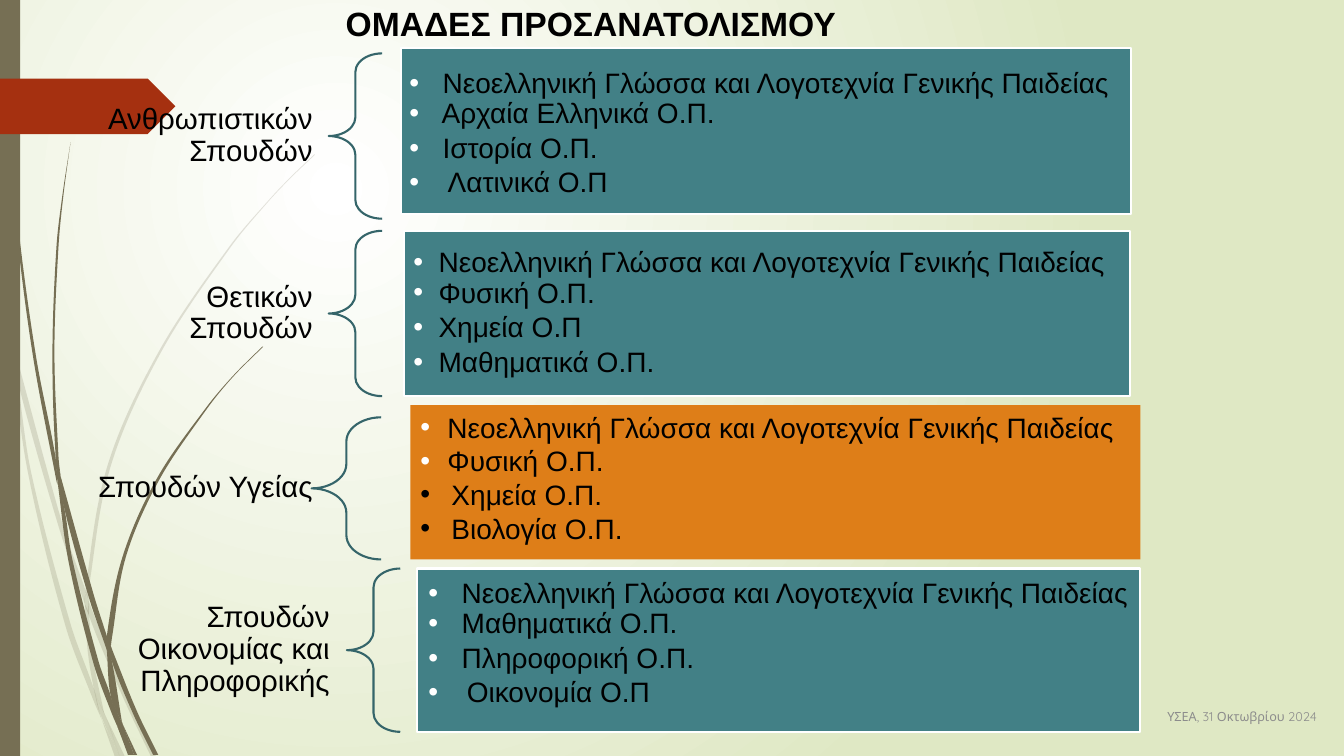
"""Build the slide that lists the subjects of each study orientation group."""
import pptx
import pptx.dml.color
import pptx.enum.shapes
import pptx.enum.text
import pptx.oxml
import pptx.oxml.ns
import pptx.util

SHAPE = pptx.enum.shapes.MSO_SHAPE
ANCHOR = pptx.enum.text.MSO_ANCHOR
ALIGN = pptx.enum.text.PP_ALIGN
COLUMNS, ROWS = 1333, 750

THEME = {
    "font": "Arial", "footer_font": "Quicksand",
    "title": 24, "label": 21, "subject": 20, "footer": 9, "outline": 1.5,
    "ink": "000000", "light": "FFFFFF", "muted": "8C8C8C", "backdrop": "DFE8C4",
    "teal": "428086", "orange": "DE7E18", "brace": "35656A",
    "stalk": "766F54", "arrow": "A53010",
}

TITLE = ("ΟΜΑΔΕΣ ΠΡΟΣΑΝΑΤΟΛΙΣΜΟΥ", (91, 9, 990, 28))
FOOTER = ("ΥΣΕΑ, 31 Οκτωβρίου 2024", (1148, 695, 185, 32))
COMMON_SUBJECT = "Νεοελληνική Γλώσσα και Λογοτεχνία Γενικής Παιδείας"
LABEL_SIZE = (266, 99)

GROUPS = [
    {"label": "Ανθρωπιστικών Σπουδών", "label_right": 326,
     "subjects": ["Αρχαία Ελληνικά Ο.Π.", "Ιστορία Ο.Π.", "Λατινικά Ο.Π"],
     "brace": (326, 53, 53, 164), "panel": (398, 48, 724, 164), "fill": "teal",
     "list": (397, 53, 724, 160), "indents": (33, 32, 33, 38)},
    {"label": "Θετικών Σπουδών", "label_right": 326,
     "subjects": ["Φυσική Ο.Π.", "Χημεία Ο.Π", "Μαθηματικά Ο.Π."],
     "brace": (326, 229, 53, 164), "panel": (401, 229, 720, 164), "fill": "teal",
     "list": (401, 229, 720, 164), "indents": (25, 25, 25, 25)},
    {"label": "Σπουδών Υγείας", "label_right": 326,
     "subjects": ["Φυσική Ο.Π.", "Χημεία Ο.Π.", "Βιολογία Ο.Π."],
     "brace": (309, 414, 69, 141), "panel": (407, 402, 724, 153), "fill": "orange",
     "indents": (27, 27, 31, 31)},
    {"label": "Σπουδών Οικονομίας και Πληροφορικής", "label_right": 343,
     "subjects": ["Μαθηματικά Ο.Π.", "Πληροφορική Ο.Π.", "Οικονομία Ο.Π"],
     "brace": (344, 564, 53, 162), "panel": (414, 564, 717, 162), "fill": "teal",
     "list": (416, 572, 717, 134), "indents": (33, 33, 33, 38)},
]

FAINT_STALKS = [
    ([(0, 299), (10, 344), (11, 350)], [(0, 282), (9, 322), (11, 350)]),
    ([(14, 345), (17, 376), (58, 522), (84, 599)], [(14, 345), (62, 520), (85, 586)]),
    ([(88, 596), (88, 610), (123, 694), (150, 751)], [(88, 596), (92, 607), (127, 692), (155, 751)]),
    ([(105, 711), (119, 751)], [(105, 711), (124, 751)]),
    ([(11, 350), (28, 470), (65, 621), (92, 693), (101, 714)],
     [(11, 350), (17, 376), (31, 469), (70, 619), (93, 683), (99, 707), (101, 714)]),
    ([(84, 599), (87, 646), (93, 683), (96, 692), (105, 711)],
     [(84, 599), (88, 608), (91, 646), (103, 706), (105, 711)]),
    ([(312, 153), (289, 175), (268, 197), (228, 244), (158, 348), (107, 461), (85, 584), (88, 596)],
     [(312, 154), (290, 175), (268, 198), (229, 245), (160, 349), (110, 462), (88, 584), (88, 596)]),
    ([(101, 714), (114, 751)], [(101, 714), (119, 751)]),
    ([(85, 586), (84, 599), (88, 610)], [(85, 586), (88, 596), (88, 610)]),
    ([(93, 683), (99, 707), (119, 751)], [(93, 683), (96, 692), (105, 711), (119, 751)]),
]
SOLID_STALKS = [
    ([(3, 0), (4, 48), (7, 110), (17, 233), (33, 355), (56, 477), (57, 481)],
     [(4, 0), (5, 48), (8, 109), (19, 232), (36, 355), (55, 453), (57, 481)]),
    ([(60, 472), (64, 505), (88, 592), (106, 645)], [(60, 472), (93, 590), (106, 631)]),
    ([(110, 641), (111, 656), (132, 708), (152, 749)], [(110, 641), (113, 649), (136, 706), (157, 749)]),
    ([(57, 477), (68, 557), (93, 659), (111, 708), (117, 722)],
     [(57, 477), (64, 505), (72, 556), (98, 657), (110, 691), (117, 722)]),
    ([(70, 141), (62, 193), (56, 245), (52, 349), (55, 449), (60, 472)],
     [(70, 141), (63, 193), (58, 245), (54, 349), (58, 453), (60, 472)]),
    ([(122, 719), (133, 749)], [(122, 719), (136, 749)]),
    ([(55, 449), (57, 477), (64, 505)], [(55, 449), (60, 472), (64, 505)]),
    ([(260, 344), (231, 373), (204, 405), (156, 474), (122, 551), (106, 631), (110, 641)],
     [(261, 344), (231, 374), (205, 406), (158, 476), (125, 552), (111, 633), (110, 641)]),
    ([(117, 722), (127, 749)], [(117, 722), (131, 749)]),
    ([(106, 645), (110, 691), (122, 719)], [(106, 645), (111, 656), (121, 716), (122, 719)]),
    ([(106, 631), (106, 645), (111, 656)], [(106, 631), (110, 641), (111, 656)]),
    ([(110, 691), (117, 722), (130, 749)], [(110, 691), (116, 706), (122, 719), (133, 749)]),
]


def grid(*cells):
    return [pptx.util.Inches(cell / 100) for cell in cells]


def rgb(name):
    return pptx.dml.color.RGBColor.from_string(THEME[name])


def apply(target, values):
    for name, value in values.items():
        setattr(target, name, value)


def element(tag, *children, **attributes):
    made = pptx.oxml.parse_xml(f"<{tag} {pptx.oxml.ns.nsdecls('a')}/>")
    for name, value in attributes.items():
        made.set(name, str(value))
    made.extend(children)
    return made


def paint(shape, fill=None, line=None):
    shape.shadow.inherit = False
    for part, colour in ((shape.fill, fill), (shape.line.fill, line)):
        if colour:
            part.solid()
            part.fore_color.rgb = rgb(colour)
        else:
            part.background()
    if line:
        shape.line.width = pptx.util.Pt(THEME["outline"])


def set_frame(frame, insets, anchor):
    margins = zip(("margin_left", "margin_top", "margin_right", "margin_bottom"), grid(*insets))
    apply(frame, {**dict(margins), "word_wrap": True, "vertical_anchor": anchor,
                  "auto_size": pptx.enum.text.MSO_AUTO_SIZE.NONE})


def write(paragraph, words, size, colour="ink", font="font", bold=False, **layout):
    run = paragraph.add_run()
    run.text = words
    apply(run.font, {"name": THEME[font], "size": pptx.util.Pt(THEME[size]), "bold": bold})
    run.font.color.rgb = rgb(colour)
    apply(paragraph, layout)


def add_bullet(paragraph, indent, colour):
    properties = paragraph._p.get_or_add_pPr()
    width = grid(indent)[0]
    apply_to = {"marL": width, "indent": -width}
    for name, value in apply_to.items():
        properties.set(name, str(value))
    properties.extend([element("a:buClr", element("a:srgbClr", val=THEME[colour])),
                       element("a:buFont", typeface=THEME["font"]), element("a:buChar", char="•")])


def bend(edge):
    neighbours = zip(edge[:1] + edge[:-1], edge[1:] + edge[-1:])
    slopes = [(after[0] - before[0]) / (after[1] - before[1]) for before, after in neighbours]
    curves = []
    for (x, y), (end_x, end_y), slope, end_slope in zip(edge, edge[1:], slopes, slopes[1:]):
        third = (end_y - y) / 3
        curves.append([(x + slope * third, y + third),
                       (end_x - end_slope * third, end_y - third), (end_x, end_y)])
    return curves


def add_stalk(slide, left_edge, right_edge, opacity):
    rising_edge = right_edge[::-1]
    corners = [grid(*point) for point in left_edge + rising_edge]
    builder = slide.shapes.build_freeform(*corners[0])
    builder.add_line_segments(corners[1:], close=True)
    stalk = builder.convert_to_shape()
    paint(stalk, "stalk")
    sides = stalk._element.findall(".//" + pptx.oxml.ns.qn("a:lnTo"))
    for side, curve in zip(sides, bend(left_edge) + [None] + bend(rising_edge)):
        if curve:
            points = [grid(*point) for point in curve]
            side.getparent().replace(side, element("a:cubicBezTo", *[
                element("a:pt", x=int(x - stalk.left), y=int(y - stalk.top)) for x, y in points]))
    if opacity < 100:
        tint = stalk._element.spPr.find(".//" + pptx.oxml.ns.qn("a:srgbClr"))
        tint.append(element("a:alpha", val=opacity * 1000))


def add_backdrop(slide):
    fill = slide.background.fill
    fill.gradient()
    for stop, colour, position in zip(fill.gradient_stops, ("light", "backdrop"), (0, 1)):
        stop.color.rgb = rgb(colour)
        stop.position = position
    linear = slide._element.find(".//" + pptx.oxml.ns.qn("a:lin"))
    focus = element("a:fillToRect", l=50000, t=50000, r=100000, b=100000)
    linear.getparent().replace(linear, element("a:path", focus, path="circle"))
    for stalks, opacity in ((FAINT_STALKS, 20), (SOLID_STALKS, 100)):
        for left_edge, right_edge in stalks:
            add_stalk(slide, left_edge, right_edge, opacity)
    paint(slide.shapes.add_shape(SHAPE.RECTANGLE, *grid(0, 0, 20, ROWS)), "stalk")
    paint(slide.shapes.add_shape(SHAPE.PENTAGON, *grid(0, 78, 174, 55)), "arrow")


def add_group(slide, group):
    boxed = "list" in group
    _, brace_top, _, brace_height = group["brace"]
    width, height = LABEL_SIZE
    label_top = brace_top + (brace_height - height) / 2
    label = slide.shapes.add_textbox(*grid(group["label_right"] - width, label_top, width, height))
    set_frame(label.text_frame, (16, 6, 16, 6), ANCHOR.MIDDLE)
    write(label.text_frame.paragraphs[0], group["label"], "label",
          alignment=ALIGN.RIGHT, line_spacing=0.9)

    brace = slide.shapes.add_shape(SHAPE.LEFT_BRACE, *grid(*group["brace"]))
    brace.adjustments[0], brace.adjustments[1] = 0.35, 0.5
    paint(brace, line="brace")

    panel = slide.shapes.add_shape(SHAPE.RECTANGLE, *grid(*group["panel"]))
    paint(panel, group["fill"], "light" if boxed else None)
    frame = (slide.shapes.add_textbox(*grid(*group["list"])) if boxed else panel).text_frame
    set_frame(frame, (9, 9, 9, 9) if boxed else (10, 5, 10, 5), ANCHOR.MIDDLE if boxed else ANCHOR.TOP)
    subjects = [COMMON_SUBJECT, *group["subjects"]]
    for row, (subject, indent) in enumerate(zip(subjects, group["indents"])):
        paragraph = frame.add_paragraph() if row else frame.paragraphs[0]
        write(paragraph, subject, "subject", alignment=ALIGN.LEFT,
              line_spacing=0.9 if boxed else 1.0,
              space_before=pptx.util.Pt(3.1 if boxed and row > 1 else 0))
        add_bullet(paragraph, indent, "light" if boxed or row < 2 else "ink")


def main():
    deck = pptx.Presentation()
    deck.slide_width, deck.slide_height = grid(COLUMNS, ROWS)
    slide = deck.slides.add_slide(deck.slide_layouts[5])
    add_backdrop(slide)

    heading, place = TITLE
    title = slide.shapes.title
    apply(title, dict(zip(("left", "top", "width", "height"), grid(*place))))
    set_frame(title.text_frame, (10, 5, 10, 5), ANCHOR.MIDDLE)
    write(title.text_frame.paragraphs[0], heading, "title", bold=True, alignment=ALIGN.CENTER)

    for group in GROUPS:
        add_group(slide, group)

    date_line, place = FOOTER
    footer = slide.shapes.add_textbox(*grid(*place))
    set_frame(footer.text_frame, (10, 5, 10, 5), ANCHOR.MIDDLE)
    write(footer.text_frame.paragraphs[0], date_line, "footer", "muted", "footer_font")
    deck.save("out.pptx")


if __name__ == "__main__":
    main()
